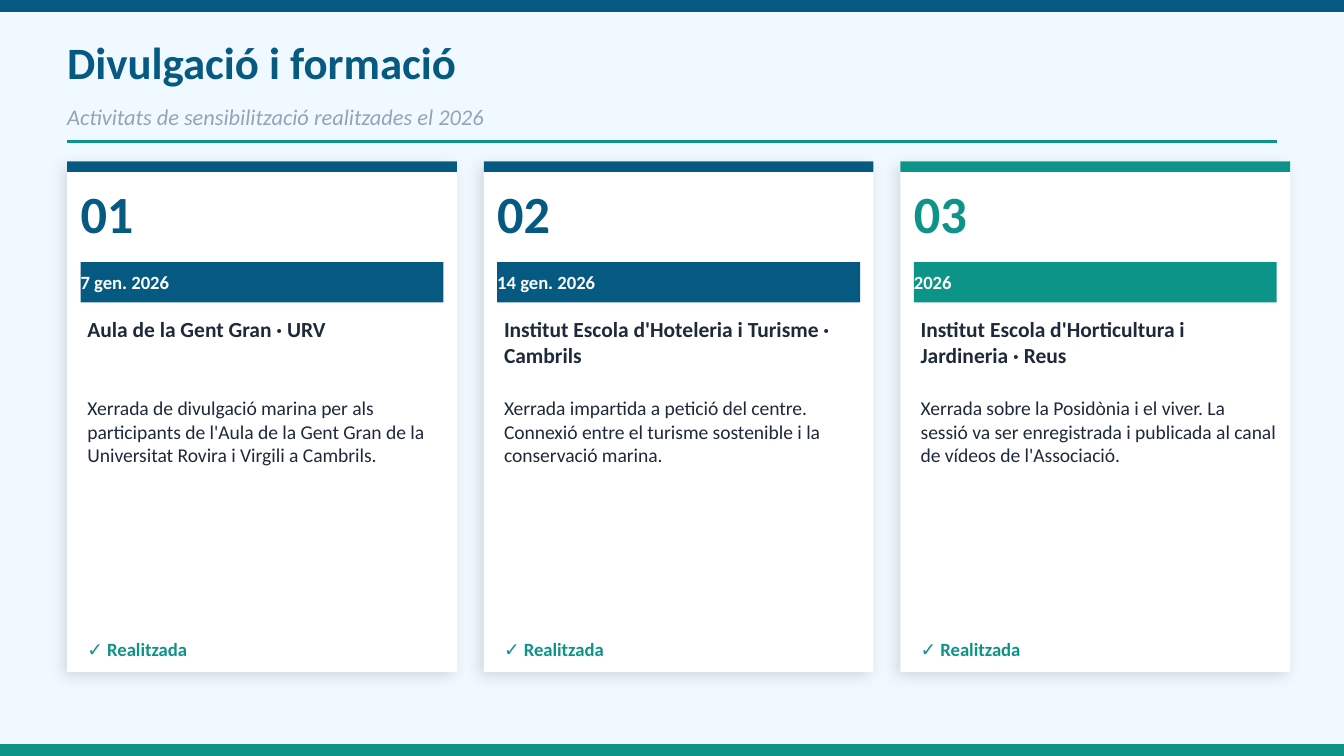
from dataclasses import dataclass
from typing import NamedTuple, Optional

from lxml import etree
from pptx import Presentation
from pptx import util as u
from pptx.dml.color import RGBColor
from pptx.enum import shapes, text
from pptx.oxml.ns import qn


@dataclass(frozen=True)
class Theme:
    font: str = "Calibri"
    page: str = "F0F9FF"
    navy: str = "065A82"
    teal: str = "0D9488"
    ink: str = "1E293B"
    muted: str = "94A3B8"
    white: str = "FFFFFF"
    shadow: str = "000000"
    title: float = 24
    subtitle: float = 12
    number: float = 28
    heading: float = 11.5
    body: float = 10.5
    label: float = 10


class Box(NamedTuple):
    """Position and size in grid columns and rows."""
    col: float
    row: float
    cols: float
    rows: float


class Activity(NamedTuple):
    date: str
    place: str
    summary: str
    color: str


T = Theme()
UNIT = 0.1  # inches per grid column and row
COLS, ROWS = 100, 56.25
MARGIN, BAND = 5, 0.8
CARD_TOP, CARD_COLS, CARD_ROWS, GAP = 12, 29, 38, 2

ACTIVITIES = [
    Activity("7 gen. 2026", "Aula de la Gent Gran · URV",
             "Xerrada de divulgació marina per als participants de l'Aula de la "
             "Gent Gran de la Universitat Rovira i Virgili a Cambrils.", T.navy),
    Activity("14 gen. 2026", "Institut Escola d'Hoteleria i Turisme · Cambrils",
             "Xerrada impartida a petició del centre. Connexió entre el turisme "
             "sostenible i la conservació marina.", T.navy),
    Activity("2026", "Institut Escola d'Horticultura i Jardineria · Reus",
             "Xerrada sobre la Posidònia i el viver. La sessió va ser enregistrada "
             "i publicada al canal de vídeos de l'Associació.", T.teal),
]


def grid(n: float) -> int:
    return u.Emu(round(n * UNIT * u.Inches(1)))


def rgb(color: str) -> RGBColor:
    return RGBColor.from_string(color)


def add_rect(s, box: Box, fill: str, line: Optional[float] = None):
    sp = s.shapes.add_shape(shapes.MSO_SHAPE.RECTANGLE, *map(grid, box))
    sp.shadow.inherit = False
    sp.fill.solid()
    sp.fill.fore_color.rgb = rgb(fill)
    if line is None:
        sp.line.fill.background()
    else:
        sp.line.color.rgb = rgb(fill)
        sp.line.width = u.Pt(line)
    return sp


def add_shadow(sp) -> None:
    effects = sp._element.spPr.find(qn("a:effectLst"))
    outer = etree.SubElement(effects, qn("a:outerShdw"), blurRad=str(u.Pt(8)),
                             dist=str(u.Pt(3)), dir=str(135 * 60000),
                             algn="bl", rotWithShape="0")
    color = etree.SubElement(outer, qn("a:srgbClr"), val=T.shadow)
    etree.SubElement(color, qn("a:alpha"), val="12000")


def add_text(s, box: Box, words: str, size: float, color: str,
             top: bool = False, **style: bool) -> None:
    tf = s.shapes.add_textbox(*map(grid, box)).text_frame
    anchor = text.MSO_ANCHOR.TOP if top else text.MSO_ANCHOR.MIDDLE
    frame = dict(word_wrap=True, vertical_anchor=anchor, margin_left=0,
                 margin_right=0, margin_top=0, margin_bottom=0)
    for name, value in frame.items():
        setattr(tf, name, value)
    r = tf.paragraphs[0].add_run()
    r.text = words
    for name, value in dict(name=T.font, size=u.Pt(size), **style).items():
        setattr(r.font, name, value)
    r.font.color.rgb = rgb(color)


def add_rule(s, col: float, row: float, cols: float) -> None:
    line = s.shapes.add_connector(shapes.MSO_CONNECTOR.STRAIGHT, grid(col),
                                  grid(row), grid(col + cols), grid(row))
    line.line.color.rgb = rgb(T.teal)
    line.line.width = u.Pt(1.5)
    etree.SubElement(line._element.spPr, qn("a:effectLst"))


def add_card(s, index: int, item: Activity) -> None:
    left = MARGIN + index * (CARD_COLS + GAP)
    inner, body = left + 1, left + 1.5
    body_cols = CARD_COLS - 2.5

    # Panel with its coloured top edge
    add_shadow(add_rect(s, Box(left, CARD_TOP, CARD_COLS, CARD_ROWS), T.white))
    add_rect(s, Box(left, CARD_TOP, CARD_COLS, BAND), item.color)

    # Number and date
    add_text(s, Box(inner, CARD_TOP + BAND, 6, 6), f"{index + 1:02}",
             T.number, item.color, bold=True)
    date = Box(inner, CARD_TOP + 7.5, CARD_COLS - 2, 3)
    add_rect(s, date, item.color)
    add_text(s, date, item.date, T.label, T.white, bold=True)

    # Place, summary and status
    add_text(s, Box(body, CARD_TOP + 11.5, body_cols, 5.5), item.place,
             T.heading, T.ink, top=True, bold=True)
    add_text(s, Box(body, CARD_TOP + 17.5, body_cols, 19), item.summary,
             T.body, T.ink, top=True)
    add_text(s, Box(body, CARD_TOP + 35.2, body_cols, 2.2), "✓ Realitzada",
             T.label, T.teal, bold=True)


def main() -> None:
    prs = Presentation()
    prs.slide_width, prs.slide_height = grid(COLS), grid(ROWS)
    s = prs.slides.add_slide(prs.slide_layouts[6])
    s.background.fill.solid()
    s.background.fill.fore_color.rgb = rgb(T.page)

    # Page bands
    add_rect(s, Box(0, 0, COLS, BAND), T.navy, line=1)
    add_rect(s, Box(0, ROWS - BAND, COLS, BAND), T.teal, line=1)

    # Header
    width = COLS - 2 * MARGIN
    add_text(s, Box(MARGIN, 1.8, width, 5.5), "Divulgació i formació",
             T.title, T.navy, bold=True)
    add_text(s, Box(MARGIN, 7.2, width, 3),
             "Activitats de sensibilització realitzades el 2026",
             T.subtitle, T.muted, italic=True)
    add_rule(s, MARGIN, 10.5, width)

    # Activity cards
    for index, item in enumerate(ACTIVITIES):
        add_card(s, index, item)

    prs.save("out.pptx")


if __name__ == "__main__":
    main()
